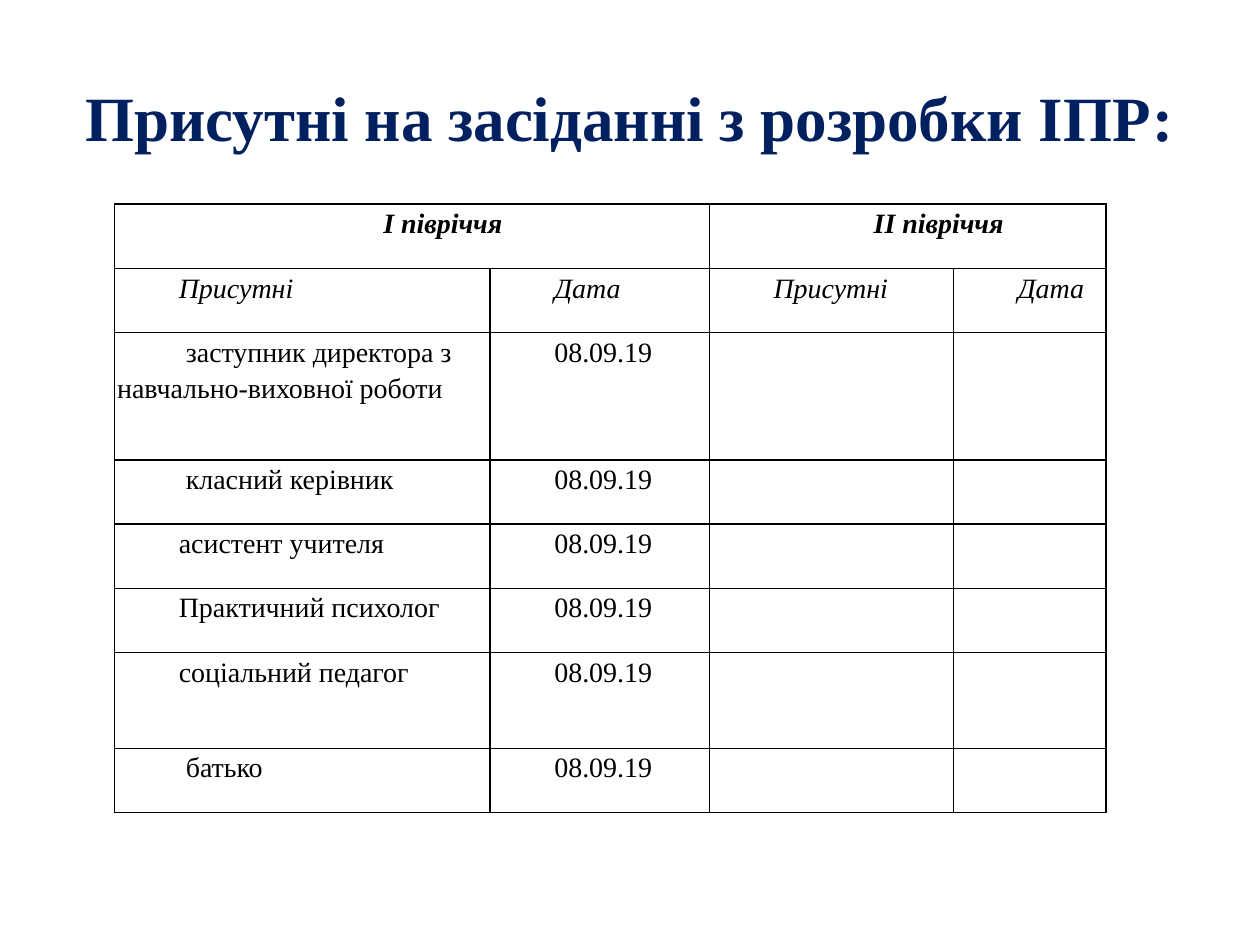
from lxml.etree import SubElement
from pptx import Presentation
from pptx.dml.color import RGBColor
from pptx.enum.text import MSO_ANCHOR, PP_ALIGN
from pptx.oxml.ns import qn
from pptx.util import Inches, Pt

THEME = {
    "font": "Times New Roman",
    "title": "002060", "ink": "000000",
    "title_size": 36, "cell_size": 16, "line": 1,
}
TITLE = "Присутні на засіданні з розробки ІПР:"
HALVES = ["І півріччя", "ІІ півріччя"]
HEADS = ["Присутні", "Дата"]
DATE = "08.09.19"
PEOPLE = [
    (" заступник директора з навчально-виховної роботи", 1.01),
    (" класний керівник", 0.51),
    ("асистент учителя", 0.51),
    ("Практичний психолог", 0.51),
    ("соціальний педагог", 0.76),
    (" батько", 0.51),
]
COLS = [2.98, 1.74, 1.94, 1.21]
ROWS = [0.51, 0.51] + [high for _, high in PEOPLE]
LEFT, TOP = 0.91, 1.62


def write(frame, text, size=THEME["cell_size"], color=THEME["ink"],
          bold=False, italic=False, align=PP_ALIGN.LEFT, indent=0, space=None):
    para = frame.paragraphs[0]
    para.alignment = align
    if space:
        para.line_spacing = space
    if indent:
        props = para._p.get_or_add_pPr()
        props.set("marL", "0")
        props.set("indent", str(Inches(indent)))
    run = para.add_run()
    run.text = text
    font = run.font
    font.name, font.size = THEME["font"], Pt(size)
    font.bold, font.italic = bold, italic
    font.color.rgb = RGBColor.from_string(color)


def frame_cell(cell):
    """Set the margins, four borders and empty fill of a cell."""
    cell.margin_left = cell.margin_right = Inches(0.02)
    cell.margin_top = cell.margin_bottom = 0
    props = cell._tc.get_or_add_tcPr()
    for side in ("lnL", "lnR", "lnT", "lnB"):
        line = SubElement(props, qn(f"a:{side}"), w=str(Pt(THEME["line"])))
        fill = SubElement(line, qn("a:solidFill"))
        SubElement(fill, qn("a:srgbClr"), val=THEME["ink"])
    cell.fill.background()


def add_grid(slide):
    grid = slide.shapes.add_table(
        len(ROWS), len(COLS), Inches(LEFT), Inches(TOP),
        Inches(sum(COLS)), Inches(sum(ROWS))).table
    grid.first_row = grid.horz_banding = False
    for col, wide in zip(grid.columns, COLS):
        col.width = Inches(wide)
    for row, high in zip(grid.rows, ROWS):
        row.height = Inches(high)
        for cell in row.cells:
            frame_cell(cell)

    def put(row, col, text, **style):
        write(grid.cell(row, col).text_frame, text,
              indent=0.49, space=1.15, **style)

    for half, text in enumerate(HALVES):
        col = half * 2
        grid.cell(0, col).merge(grid.cell(0, col + 1))
        put(0, col, text, bold=True, italic=True, align=PP_ALIGN.CENTER)
        for step, head in enumerate(HEADS):
            put(1, col + step, head, italic=True)
    for row, (person, _) in enumerate(PEOPLE, 2):
        put(row, 0, person)
        put(row, 1, DATE)


def main():
    deck = Presentation()
    deck.slide_width, deck.slide_height = Inches(10), Inches(7.5)
    slide = deck.slides.add_slide(deck.slide_layouts[5])
    title = slide.shapes.title
    title.left, title.top = Inches(0.5), Inches(0.3)
    title.width, title.height = Inches(9), Inches(1.25)
    title.text_frame.vertical_anchor = MSO_ANCHOR.MIDDLE
    write(title.text_frame, TITLE, size=THEME["title_size"],
          color=THEME["title"], bold=True, align=PP_ALIGN.CENTER)
    add_grid(slide)
    deck.save("out.pptx")


if __name__ == "__main__":
    main()
